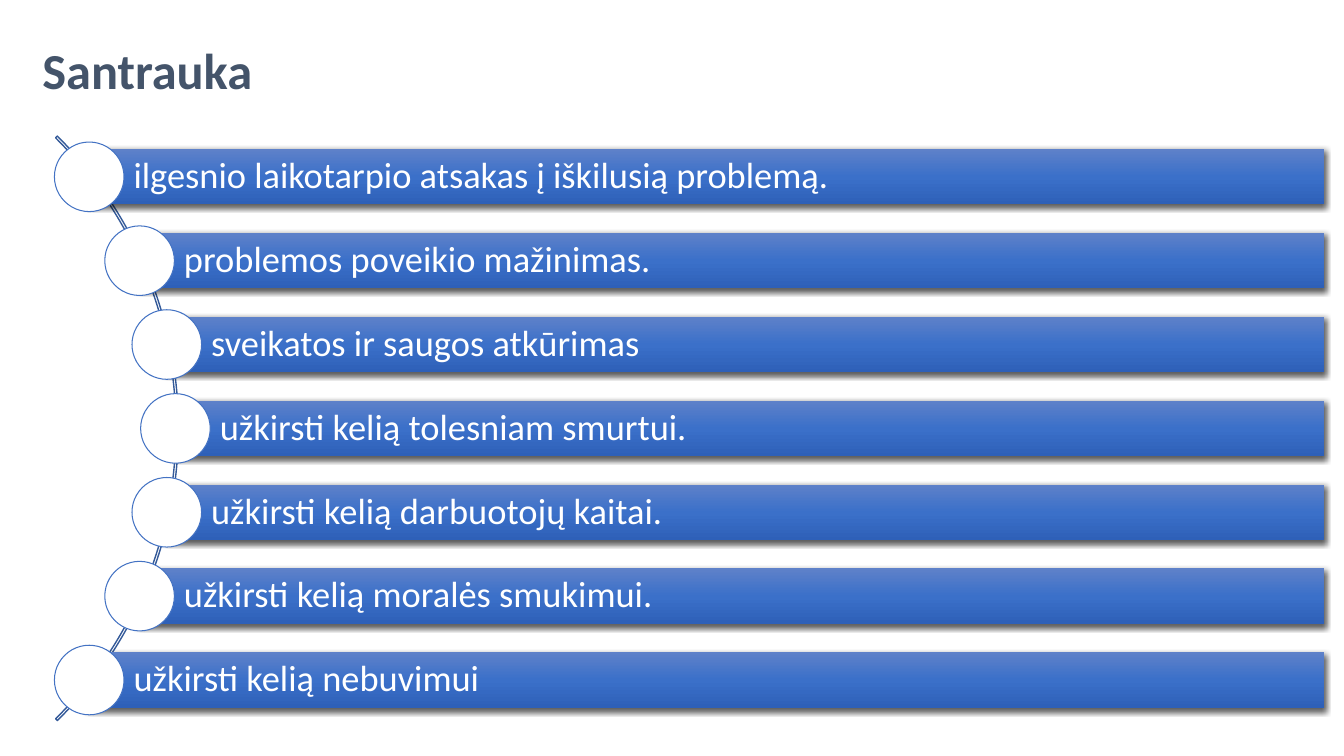
from math import sqrt

from pptx import Presentation
from pptx.dml.color import RGBColor
from pptx.enum.shapes import MSO_SHAPE as Kind
from pptx.enum.text import MSO_ANCHOR as Anchor, PP_ALIGN as Align
from pptx.oxml import parse_xml
from pptx.oxml.ns import nsdecls
from pptx.util import Inches, Pt

WHITE = RGBColor(0xFF, 0xFF, 0xFF)
SLATE = RGBColor(0x44, 0x54, 0x6A)
ARC = RGBColor(0x34, 0x5A, 0x99)
RING = RGBColor(0x43, 0x72, 0xC3)
TOP = RGBColor(0x5E, 0x81, 0xC9)
MID = RGBColor(0x3B, 0x70, 0xC9)
LOW = RGBColor(0x2E, 0x60, 0xB8)

FONT = "Calibri"
HUB_X, HUB_Y = -2.33, 4.25
ARC_SIZE = 8.2
RADIUS = 4.07
PITCH = 0.832
RIGHT = 13.13
BAR_H = 0.55
DOT = 0.69

ITEMS = [
    "ilgesnio laikotarpio atsakas į iškilusią problemą.",
    "problemos poveikio mažinimas.",
    "sveikatos ir saugos atkūrimas",
    "užkirsti kelią tolesniam smurtui.",
    "užkirsti kelią darbuotojų kaitai.",
    "užkirsti kelią moralės smukimui.",
    "užkirsti kelią nebuvimui",
]


def add_shape(slide, kind, x, y, w, h):
    shape = slide.shapes.add_shape(kind, Inches(x), Inches(y), Inches(w), Inches(h))
    shape.shadow.inherit = False
    return shape


def set_line(shape, color, width):
    shape.line.color.rgb = color
    shape.line.width = Pt(width)


def set_font(para, size, color, bold=False):
    font = para.font
    font.name, font.size, font.bold = FONT, Pt(size), bold
    font.color.rgb = color


def shade(shape):
    stops = "".join(
        f'<a:gs pos="{pos}"><a:srgbClr val="{color}"/></a:gs>'
        for pos, color in ((0, TOP), (50000, MID), (100000, LOW))
    )
    props = shape._element.spPr
    props.insert(2, parse_xml(
        f'<a:gradFill {nsdecls("a")} rotWithShape="1"><a:gsLst>{stops}</a:gsLst>'
        '<a:lin ang="5400000" scaled="0"/></a:gradFill>'
    ))
    props.find("{*}effectLst").append(parse_xml(
        f'<a:outerShdw {nsdecls("a")} blurRad="{Pt(4.5)}" dist="{Pt(1.5)}" '
        'dir="5400000" algn="ctr" rotWithShape="0">'
        '<a:srgbClr val="000000"><a:alpha val="63000"/></a:srgbClr></a:outerShdw>'
    ))


def add_title(slide, text):
    title = slide.shapes.title
    title.left, title.top = Inches(0.32), Inches(0.2)
    title.width, title.height = Inches(12.89), Inches(0.97)
    frame = title.text_frame
    frame.text = text
    frame.vertical_anchor = Anchor.MIDDLE
    para = frame.paragraphs[0]
    para.alignment = Align.LEFT
    set_font(para, 36, SLATE, True)


def add_arc(slide):
    half = ARC_SIZE / 2
    arc = add_shape(slide, Kind.BLOCK_ARC, HUB_X - half, HUB_Y - half, ARC_SIZE, ARC_SIZE)
    for i, value in enumerate((189, 27, 0.003)):
        arc.adjustments[i] = value
    arc.fill.background()
    set_line(arc, ARC, 1)


def add_bar(slide, x, y, text):
    bar = add_shape(slide, Kind.RECTANGLE, x, y - BAR_H / 2, RIGHT - x, BAR_H)
    bar.line.fill.background()
    shade(bar)
    frame = bar.text_frame
    frame.word_wrap = True
    frame.vertical_anchor = Anchor.MIDDLE
    frame.margin_left = Inches(0.44)
    frame.margin_top = frame.margin_right = frame.margin_bottom = Inches(0.07)
    frame.text = text
    para = frame.paragraphs[0]
    para.alignment = Align.LEFT
    para.line_spacing = 0.9
    set_font(para, 26, WHITE)


def add_dot(slide, x, y):
    dot = add_shape(slide, Kind.OVAL, x - DOT / 2, y - DOT / 2, DOT, DOT)
    dot.fill.solid()
    dot.fill.fore_color.rgb = WHITE
    set_line(dot, RING, 0.75)


def main():
    deck = Presentation()
    deck.slide_width, deck.slide_height = Inches(13.33), Inches(7.5)
    slide = deck.slides.add_slide(deck.slide_layouts[5])
    add_title(slide, "Santrauka")
    add_arc(slide)
    for i, text in enumerate(ITEMS):
        rise = (i - (len(ITEMS) - 1) / 2) * PITCH
        x, y = HUB_X + sqrt(RADIUS ** 2 - rise ** 2), HUB_Y + rise
        add_bar(slide, x, y, text)
        add_dot(slide, x, y)
    deck.save("out.pptx")


if __name__ == "__main__":
    main()
